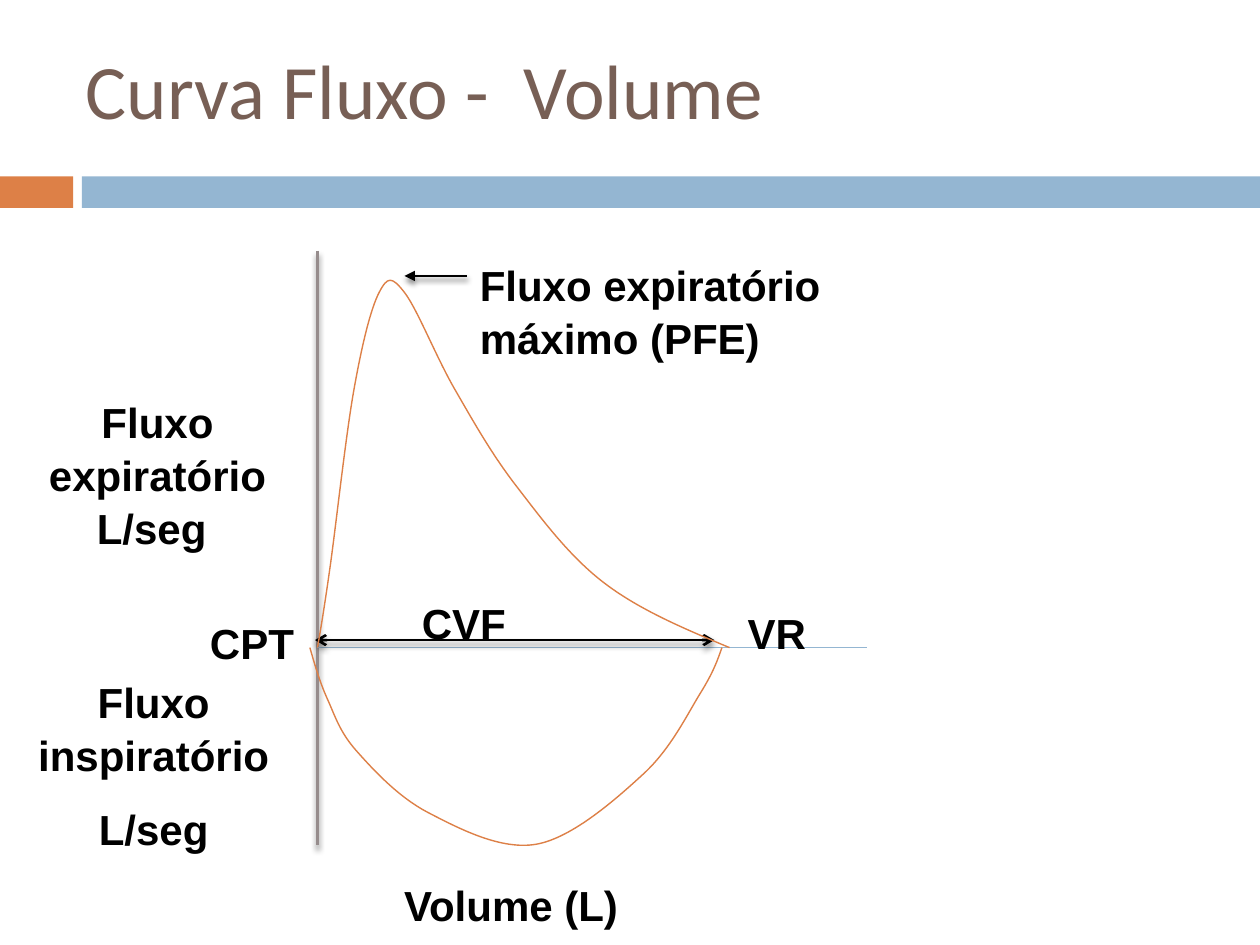
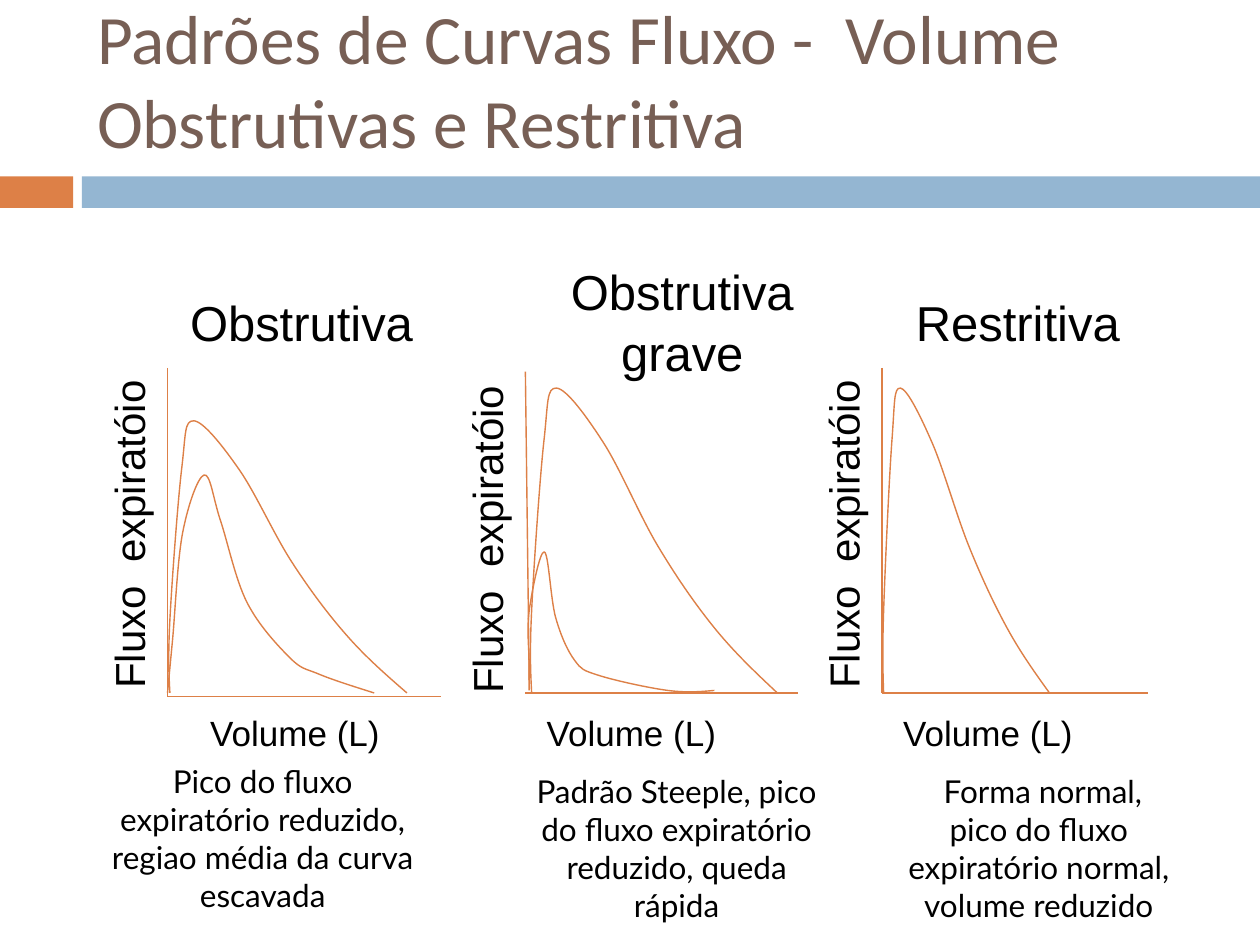
import dataclasses
import itertools

import lxml.etree
import pptx
import pptx.dml.color
import pptx.enum.shapes
import pptx.enum.text
import pptx.oxml.ns
import pptx.util

# Grid: 100 columns by 75 rows of square cells
WIDE, HIGH = pptx.util.Inches(10), pptx.util.Inches(7.5)
COLS, ROWS = 100, 75
HUES = {"title": "775F55", "accent": "DD8047", "band": "94B6D2",
        "axis": "968C8C", "ink": "000000"}
THIN, THICK = 0.79, 1.5
ALIGN = pptx.enum.text.PP_ALIGN
LEFT, MID = ALIGN.LEFT, ALIGN.CENTER
TITLE_FONT, LABEL_FONT, NOTE_FONT = "Calibri", "Arial", "Lato"
Point = tuple[float, float]
qn = pptx.oxml.ns.qn


@dataclasses.dataclass(frozen=True)
class Label:
    col: float
    row: float
    wide: float
    high: float
    lines: tuple[str, ...]
    size: float = 24
    bold: bool = False
    align: int = LEFT
    font: str = LABEL_FONT
    turn: float = 0
    space: float = 0


@dataclasses.dataclass(frozen=True)
class Line:
    start: Point
    end: Point
    hue: str = "accent"
    width: float = THIN
    head: str = ""
    tail: str = ""
    shade: bool = False


@dataclasses.dataclass(frozen=True)
class Panel:
    name: Label
    note: Label
    axes: tuple[Line, Line]
    curves: tuple[tuple[Point, ...], ...]
    flow_row: float
    volume_col: float


def across(col: float) -> int:
    return round(WIDE * col / COLS)


def down(row: float) -> int:
    return round(HIGH * row / ROWS)


def paint(hue: str) -> pptx.dml.color.RGBColor:
    return pptx.dml.color.RGBColor.from_string(HUES[hue])


def style_run(run, font: str, size: float, hue: str, bold: bool = False) -> None:
    run.font.name, run.font.size = font, pptx.util.Pt(size)
    run.font.bold = bold
    run.font.color.rgb = paint(hue)


def add_base(deck, title: str, col: float, row: float, size: float):
    """Add a slide with its two bands and its title."""
    slide = deck.slides.add_slide(deck.slide_layouts[5])
    for left, wide, hue in ((0, 5.8, "accent"), (6.5, 93.5, "band")):
        band = slide.shapes.add_shape(
            pptx.enum.shapes.MSO_SHAPE.RECTANGLE,
            across(left), down(14), across(wide), down(2.5))
        band.shadow.inherit = False
        band.fill.solid()
        band.fill.fore_color.rgb = paint(hue)
        band.line.fill.background()
    head = slide.shapes.title
    head.left, head.top = across(col), down(row)
    head.width, head.height = across(90), down(12.5)
    frame = head.text_frame
    frame.auto_size = pptx.enum.text.MSO_AUTO_SIZE.NONE
    frame.vertical_anchor = pptx.enum.text.MSO_ANCHOR.MIDDLE
    par = frame.paragraphs[0]
    par.alignment = LEFT
    run = par.add_run()
    run.text = title
    style_run(run, TITLE_FONT, size, "title")
    return slide


def add_label(slide, label: Label) -> None:
    box = slide.shapes.add_textbox(across(label.col), down(label.row),
                                   across(label.wide), down(label.high))
    box.rotation = label.turn
    frame = box.text_frame
    frame.word_wrap = True
    for spot, line in enumerate(label.lines):
        par = frame.add_paragraph() if spot else frame.paragraphs[0]
        par.alignment = label.align
        if label.font == LABEL_FONT:
            par.line_spacing = 1.05
        if spot:
            par.space_before = pptx.util.Pt(label.space)
        run = par.add_run()
        run.text = line
        style_run(run, label.font, label.size, "ink", label.bold)


def add_line(slide, line: Line) -> None:
    link = slide.shapes.add_connector(
        pptx.enum.shapes.MSO_CONNECTOR.STRAIGHT,
        across(line.start[0]), down(line.start[1]),
        across(line.end[0]), down(line.end[1]))
    link.line.color.rgb = paint(line.hue)
    link.line.width = pptx.util.Pt(line.width)
    add = lxml.etree.SubElement
    for tag, kind in (("a:headEnd", line.head), ("a:tailEnd", line.tail)):
        if kind:
            add(link.line._ln, qn(tag), type=kind)
    effect = add(link._element.spPr, qn("a:effectLst"))
    if line.shade:
        shade = add(effect, qn("a:outerShdw"), blurRad="38100", dist="30480",
                    dir="5400000", rotWithShape="0")
        tint = add(shade, qn("a:srgbClr"), val=HUES["ink"])
        add(tint, qn("a:alpha"), val="45000")


def blend(one: Point, two: Point, part: float) -> Point:
    return tuple(a + (b - a) * part for a, b in zip(one, two))


def add_curve(slide, knots: tuple[Point, ...]) -> None:
    """Draw a smooth open curve through all knots."""
    spots = [(across(col), down(row)) for col, row in knots]
    maker = slide.shapes.build_freeform(*spots[0], scale=1.0)
    maker.add_line_segments(spots[1:], close=False)
    curve = maker.convert_to_shape()
    curve.shadow.inherit = False
    curve.fill.background()
    curve.line.color.rgb = paint("accent")
    curve.line.width = pptx.util.Pt(THIN)

    # Turn each straight step into a cubic one, tangent to its neighbours
    pts = [(int(pt.get("x")), int(pt.get("y")))
           for pt in curve._element.iter(qn("a:pt"))]
    slopes = [tuple((b - a) / 6 for a, b in zip(past, ahead))
              for past, ahead in zip(pts, pts[2:])]
    outs = [tuple(p + s for p, s in zip(*pair)) for pair in zip(pts[1:], slopes)]
    ins = [tuple(p - s for p, s in zip(*pair)) for pair in zip(pts[1:], slopes)]
    outs.insert(0, blend(pts[0], ins[0], 0.5))
    ins.append(blend(outs[-1], pts[-1], 0.5))
    steps = list(curve._element.iter(qn("a:lnTo")))
    for step, *trio in zip(steps, outs, ins, pts[1:]):
        cubic = lxml.etree.Element(qn("a:cubicBezTo"))
        for x, y in trio:
            lxml.etree.SubElement(cubic, qn("a:pt"), x=str(round(x)), y=str(round(y)))
        step.getparent().replace(step, cubic)


# Flow-volume loop
LOOP_LINES = (
    Line((25.2, 19.9), (25.2, 67.1), "axis", THICK, shade=True),
    Line((25.2, 51.4), (68.8, 51.4), "band"),
    Line((32.1, 21.9), (37.1, 21.9), "ink", THICK, "triangle", shade=True),
    Line((25, 50.8), (56.7, 50.8), "ink", THICK, "arrow", "arrow", True),
)
LOOP_CURVES = (
    ((25.2, 51.4), (26.2, 45), (28.1, 30.9), (30.1, 23.2), (32.1, 23.2),
     (36.1, 30.9), (41, 38.6), (48, 46.3), (57.9, 51.4)),
    ((57.3, 51.4), (55.6, 55), (51.1, 61.4), (42.6, 67), (34, 64.5),
     (28.3, 59.6), (26, 55.5), (24.6, 51.4)),
)
LOOP_LABELS = (
    Label(2.5, 30.8, 20, 11.8, ("Fluxo expiratório ", "L/seg "), bold=True, align=MID),
    Label(31.1, 69.1, 24.7, 5.9, ("Volume (L)",), bold=True),
    Label(32.5, 46.7, 10.9, 5.9, ("CVF",), bold=True),
    Label(37.1, 19.9, 40.4, 5.9, ("Fluxo expiratório máximo (PFE)",), bold=True),
    Label(1.5, 53, 21.4, 15.1, ("Fluxo inspiratório", "L/seg"), bold=True,
          align=MID, space=12),
    Label(55.8, 47.5, 11.7, 5.1, ("VR",), bold=True, align=MID),
    Label(15, 48.3, 10, 5.1, ("CPT",), bold=True, align=MID),
)

# Outer curve as shares of its width and height
BASE = 55
OUTER = ((0.01, 0), (0.01, 0.27), (0.06, 0.83), (0.11, 1), (0.3, 0.82),
         (0.52, 0.48), (0.75, 0.21), (1, 0))


def outer(col: float, wide: float, high: float) -> tuple[Point, ...]:
    return tuple((col + x * wide, BASE - y * high) for x, y in OUTER)


def note(col: float, row: float, wide: float, text: str) -> Label:
    return Label(col, row, wide, 13.1, (text,), 18, align=MID, font=NOTE_FONT)


# Three patterns side by side
PANELS = (
    Panel(
        Label(14.1, 22.5, 21.1, 5.5, ("Obstrutiva",), 28),
        note(7.5, 60, 26.7,
             "Pico do fluxo expiratório reduzido, regiao média da curva escavada"),
        (Line((13.3, 29.2), (13.3, 55.3)), Line((13.3, 55.3), (35, 55.3))),
        (outer(13.3, 19, 21.6),
         ((13.3, 55), (13.7, 50.8), (14.5, 42.3), (16.2, 37.7), (17.5, 41.3),
          (19.6, 47.8), (23, 52.2), (25.3, 53.5), (29.7, 55))),
        42.3, 15.7),
    Panel(
        Label(40, 20, 28.3, 5.5, ("Obstrutiva grave",), 28, align=MID),
        note(40.8, 60.8, 25.8,
             "Padrão Steeple, pico do fluxo expiratório reduzido, queda rápida"),
        (Line((41.7, 29.5), (42, 54)), Line((41.7, 55), (63.3, 55))),
        (outer(42, 19.7, 24.2),
         ((42, 54.8), (42, 52.7), (42, 48.5), (43.2, 43.8), (44.1, 49),
          (45.6, 52.4), (47.5, 53.6), (53, 54.8), (56.7, 54.8))),
        42.7, 42.4),
    Panel(
        Label(71.7, 22.5, 19.2, 5.5, ("Restritiva",), 28),
        note(70.8, 60.8, 23.3,
             " Forma normal, pico do fluxo expiratório normal, volume reduzido"),
        (Line((70, 29.2), (70, 55)), Line((70, 55), (91.1, 55))),
        (outer(70, 13.3, 24.2),),
        42.3, 70.7),
)


def panel_labels(panel: Panel) -> tuple[Label, ...]:
    long, tall = 28.5, 5.8
    mid = panel.axes[1].start[0] - 2.9
    flow = Label(mid - long / 2, panel.flow_row - 0.9 - tall / 2, long, tall,
                 ("Fluxo  expiratóio",), turn=270)
    volume = Label(panel.volume_col, 55.8, 21.7, 4.2, ("Volume (L)",), 20)
    return panel.name, flow, volume, panel.note


def draw(slide, lines, curves, labels) -> None:
    for add, parts in ((add_line, lines), (add_curve, curves), (add_label, labels)):
        for part in parts:
            add(slide, part)


def main() -> None:
    deck = pptx.Presentation()
    deck.slide_width, deck.slide_height = WIDE, HIGH

    # Slide 1: the loop
    slide = add_base(deck, "Curva Fluxo -  Volume", 5.8, 0.8, 44)
    draw(slide, LOOP_LINES, LOOP_CURVES, LOOP_LABELS)

    # Slide 2: the patterns
    slide = add_base(
        deck, "Padrões de Curvas Fluxo -  Volume Obstrutivas e Restritiva", 6.7, 0, 39.6)
    join = itertools.chain.from_iterable
    draw(slide, join(p.axes for p in PANELS), join(p.curves for p in PANELS),
         join(panel_labels(p) for p in PANELS))

    deck.save("out.pptx")


if __name__ == "__main__":
    main()
